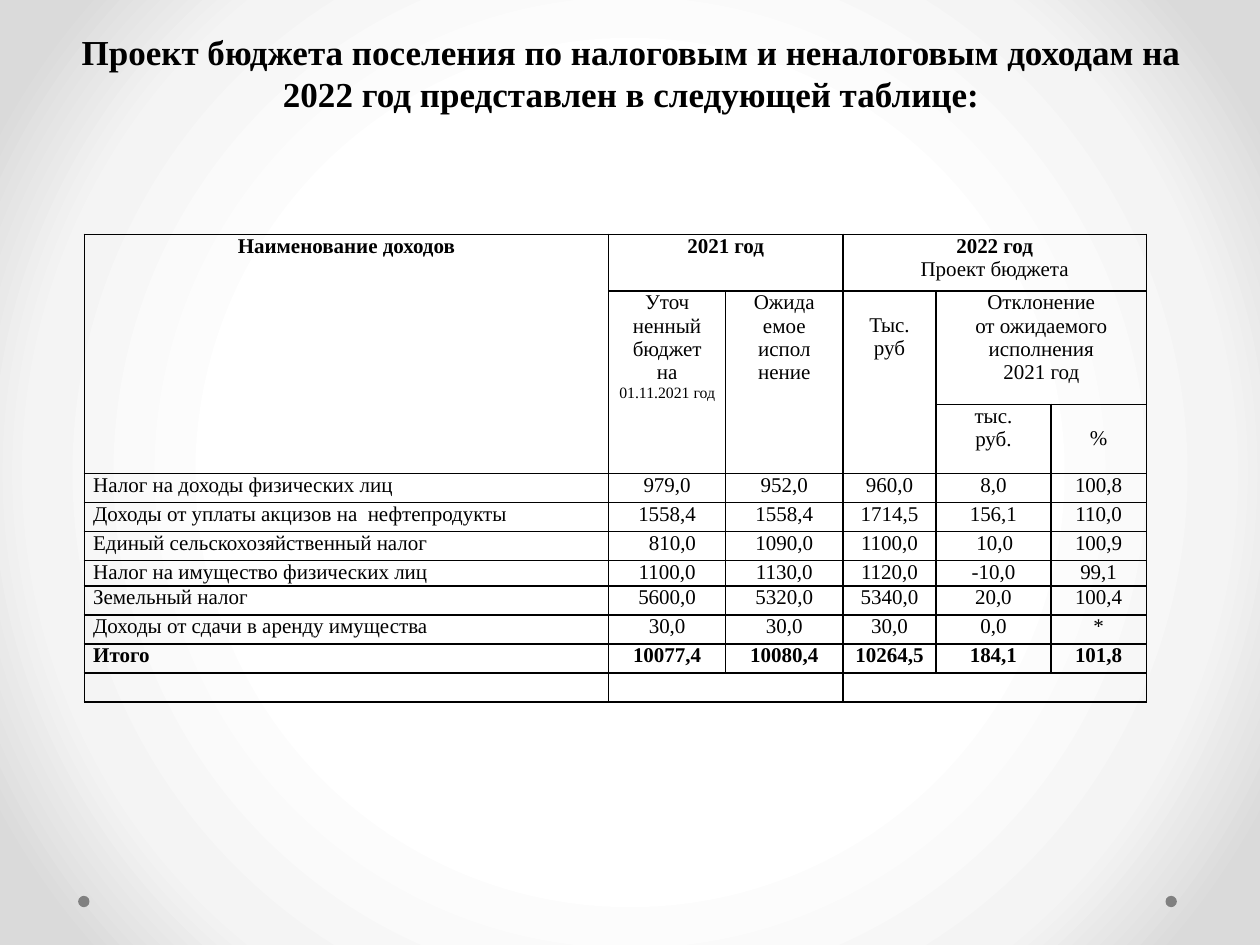
from dataclasses import dataclass

from lxml import etree
from pptx import Presentation
from pptx.dml.color import RGBColor
from pptx.enum.shapes import MSO_SHAPE as Shape
from pptx.enum.text import MSO_ANCHOR as Anchor, PP_ALIGN as Align
from pptx.oxml import parse_xml
from pptx.oxml.ns import nsdecls, qn
from pptx.util import Inches, Pt


@dataclass(frozen=True)
class Theme:
    font: str = "Times New Roman"
    ink: str = "000000"
    dot: str = "808080"
    backdrop: tuple = ((50, "FFFFFF"), (76, "F4F4F4"), (92, "DADADA"))
    title_size: int = 20
    body_size: int = 12
    note_size: int = 9
    border: int = 1


THEME = Theme()

TITLE = ("Проект бюджета поселения по налоговым и неналоговым доходам на "
         "2022 год представлен в следующей таблице:")

COLUMN_WIDTHS = [4.16, 0.93, 0.93, 0.74, 0.91, 0.76]
ROW_HEIGHTS = [0.45, 0.9, 0.55, 0.23, 0.23, 0.23, 0.19, 0.23, 0.23, 0.23, 0.23]

# Merged areas: first row, first column, last row, last column
MERGES = [(0, 0, 2, 0), (0, 1, 0, 2), (0, 3, 0, 5), (1, 1, 2, 1), (1, 2, 2, 2),
          (1, 3, 2, 3), (1, 4, 1, 5), (10, 1, 10, 2), (10, 3, 10, 5)]

# Plain header cells: row, column, lines
SUBHEADS = [
    (1, 2, ["Ожида", "емое испол", "нение"]),
    (1, 3, ["Тыс.", "руб"]),
    (1, 4, ["Отклонение", "от ожидаемого", "исполнения", "2021 год"]),
    (2, 4, ["тыс.", "руб."]),
    (2, 5, ["%"]),
]
LOWERED = [(1, 3), (2, 5)]   # headers that start one line down
INDENTED = [(5, 1), (5, 4)]  # values set from the left with an indent

FIRST_INCOME_ROW = 3
INCOMES = [
    ["Налог на доходы физических лиц", "979,0", "952,0", "960,0", "8,0", "100,8"],
    ["Доходы от уплаты акцизов на  нефтепродукты",
     "1558,4", "1558,4", "1714,5", "156,1", "110,0"],
    ["Единый сельскохозяйственный налог",
     "810,0", "1090,0", "1100,0", "10,0", "100,9"],
    ["Налог на имущество физических лиц",
     "1100,0", "1130,0", "1120,0", "-10,0", "99,1"],
    ["Земельный налог", "5600,0", "5320,0", "5340,0", "20,0", "100,4"],
    ["Доходы от сдачи в аренду имущества", "30,0", "30,0", "30,0", "0,0", "*"],
    ["Итого", "10077,4", "10080,4", "10264,5", "184,1", "101,8"],
]


def paint_background(page):
    stops = "".join(
        f'<a:gs pos="{pos * 1000}"><a:srgbClr val="{color}"/></a:gs>'
        for pos, color in THEME.backdrop)
    page.element.cSld.insert(0, parse_xml(
        f'<p:bg {nsdecls("p", "a")}><p:bgPr><a:gradFill rotWithShape="1">'
        f'<a:gsLst>{stops}</a:gsLst><a:path path="circle">'
        '<a:fillToRect l="50000" t="50000" r="50000" b="50000"/></a:path>'
        '</a:gradFill><a:effectLst/></p:bgPr></p:bg>'))


def add_dot(page, left):
    dot = page.shapes.add_shape(
        Shape.OVAL, Inches(left), Inches(7.11), Inches(0.09), Inches(0.09))
    dot.shadow.inherit = False
    dot.fill.solid()
    dot.fill.fore_color.rgb = RGBColor.from_string(THEME.dot)
    dot.line.fill.background()


def write_lines(frame, lines, align=Align.CENTER):
    """Each line is a (text, size, bold) triple and becomes a paragraph."""
    for index, (text, size, bold) in enumerate(lines):
        para = frame.add_paragraph() if index else frame.paragraphs[0]
        para.alignment = align
        span = para.add_run()
        span.text = text
        span.font.name = THEME.font
        span.font.size = Pt(size)
        span.font.bold = bold
        span.font.color.rgb = RGBColor.from_string(THEME.ink)


def body_lines(texts, bold=False):
    return [(text, THEME.body_size, bold) for text in texts]


def add_title(page):
    box = page.shapes.add_textbox(Inches(0.51), Inches(0.36), Inches(9), Inches(0.6))
    frame = box.text_frame
    frame.word_wrap = True
    frame.vertical_anchor = Anchor.BOTTOM
    write_lines(frame, [(TITLE, THEME.title_size, True)])


def style_cell(cell):
    cell.margin_left = cell.margin_right = Inches(0.07)
    cell.margin_top = cell.margin_bottom = 0
    props = cell._tc.get_or_add_tcPr()
    for side in ("a:lnL", "a:lnR", "a:lnT", "a:lnB"):
        line = etree.SubElement(props, qn(side), w=str(Pt(THEME.border)))
        fill = etree.SubElement(line, qn("a:solidFill"))
        etree.SubElement(fill, qn("a:srgbClr"), val=THEME.ink)
    cell.fill.background()


def add_grid(page):
    frame = page.shapes.add_table(
        len(ROW_HEIGHTS), len(COLUMN_WIDTHS), Inches(0.67), Inches(1.86),
        Inches(sum(COLUMN_WIDTHS)), Inches(sum(ROW_HEIGHTS)))
    table = frame.table
    table.first_row = table.horz_banding = False
    for column, width in zip(table.columns, COLUMN_WIDTHS):
        column.width = Inches(width)
    for row, height in zip(table.rows, ROW_HEIGHTS):
        row.height = Inches(height)
    for cell in table.iter_cells():
        style_cell(cell)
    for top, left, bottom, right in MERGES:
        table.cell(top, left).merge(table.cell(bottom, right))
    return table


def fill_headers(table):
    def write(row, col, lines):
        write_lines(table.cell(row, col).text_frame, lines)

    write(0, 0, body_lines(["Наименование доходов"], bold=True))
    write(0, 1, body_lines(["2021 год"], bold=True))
    write(0, 3, body_lines(["2022 год"], bold=True) + body_lines(["Проект бюджета"]))
    write(1, 1, body_lines(["Уточ", "ненный бюджет", "на"])
          + [("01.11.2021 год", THEME.note_size, False)])
    for row, col, texts in SUBHEADS:
        write(row, col, body_lines(texts))
    for row, col in LOWERED:
        table.cell(row, col).margin_top = Inches(0.18)


def fill_incomes(table):
    for row, values in enumerate(INCOMES, FIRST_INCOME_ROW):
        total = values is INCOMES[-1]
        for col, value in enumerate(values):
            cell = table.cell(row, col)
            indented = (row, col) in INDENTED
            align = Align.LEFT if col == 0 or indented else Align.CENTER
            write_lines(cell.text_frame, body_lines([value], total), align)
            if indented:
                cell.margin_left = Inches(0.32)


def shrink_empty_cells(table):
    """Keeps cells without text from stretching their row."""
    for cell in table.iter_cells():
        if not cell.text_frame.text:
            para = cell.text_frame.paragraphs[0]
            etree.SubElement(para._p, qn("a:endParaRPr"),
                             sz=str(THEME.body_size * 100))


def main():
    deck = Presentation()
    deck.slide_width, deck.slide_height = Inches(10), Inches(7.5)
    page = deck.slides.add_slide(deck.slide_layouts[6])

    # Backdrop
    paint_background(page)
    for left in (9.25, 0.62):
        add_dot(page, left)

    # Heading and income table
    add_title(page)
    table = add_grid(page)
    fill_headers(table)
    fill_incomes(table)
    shrink_empty_cells(table)

    deck.save("out.pptx")


if __name__ == "__main__":
    main()
